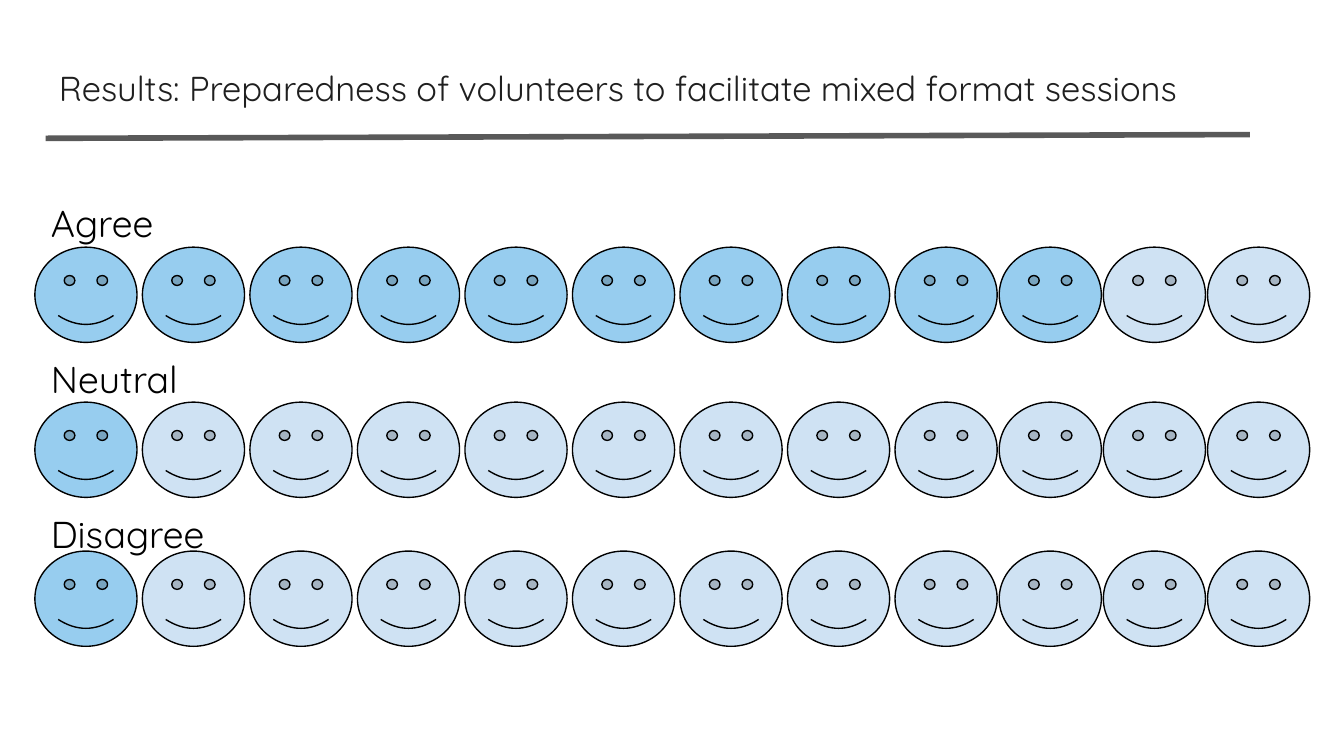
from pptx import Presentation
from pptx.dml.color import RGBColor
from pptx.enum.shapes import MSO_CONNECTOR, MSO_SHAPE
from pptx.enum.text import MSO_ANCHOR
from pptx.oxml.ns import qn
from pptx.util import Inches, Pt
from lxml.etree import SubElement

WIDTH, HEIGHT = Inches(10), Inches(5.625)
COL, ROW = WIDTH / 100, HEIGHT / 100

BLUE = RGBColor(0x97, 0xCD, 0xEF)
PALE = RGBColor(0xCF, 0xE2, 0xF3)
INK = RGBColor(0x1F, 0x1F, 0x1F)
BLACK = RGBColor(0, 0, 0)
GREY = RGBColor(0x59, 0x59, 0x59)

FONT = "Quicksand"
FACES = 12
FACE_W, FACE_H = 7.6, 12.6
PITCH, TIGHTEN, WIDE_STEPS = 8, 0.25, 8


def place(left, top, width, height):
    return [round(v) for v in (left * COL, top * ROW, width * COL, height * ROW)]


def add_text(s, box, text, size, color):
    tf = s.shapes.add_textbox(*place(*box)).text_frame
    tf.word_wrap = True
    tf.vertical_anchor = MSO_ANCHOR.TOP
    tf.margin_left = tf.margin_right = tf.margin_top = tf.margin_bottom = Inches(0.1)
    p = tf.paragraphs[0]
    p.text = text
    p.font.name, p.font.size, p.font.color.rgb = FONT, Pt(size), color


def add_header(s, box, title):
    left, top, width, height = box
    add_text(s, box, title, 18.5, INK)
    x, y, w, h = place(left, top + height, width - 3.6, 0.5)
    rule = s.shapes.add_connector(MSO_CONNECTOR.STRAIGHT, x, y, x + w, y - h)
    rule.line.color.rgb = GREY
    rule.line.width = Pt(3)
    SubElement(rule._element.spPr, qn("a:effectLst"))


def add_face(s, left, top, color):
    sp = s.shapes.add_shape(MSO_SHAPE.SMILEY_FACE, *place(left, top, FACE_W, FACE_H))
    sp.shadow.inherit = False
    sp.fill.solid()
    sp.fill.fore_color.rgb = color
    sp.line.color.rgb = BLACK
    sp.line.width = Pt(0.75)
    sp.adjustments[0] = 0.047


def add_rating(s, box, label, label_top, count):
    left, top, width, height = box
    for i in range(FACES):
        offset = PITCH * i - TIGHTEN * max(0, i - WIDE_STEPS)
        add_face(s, left + offset, top, BLUE if i < count else PALE)
    add_text(s, (left + 0.2, label_top, width, height - FACE_H), label, 20, BLACK)


def main():
    prs = Presentation()
    prs.slide_width, prs.slide_height = WIDTH, HEIGHT
    s = prs.slides.add_slide(prs.slide_layouts[6])
    add_header(s, (3.4, 7.1, 93.2, 11.2),
               "Results: Preparedness of volunteers to facilitate mixed format sessions")
    for label, label_top, top, count in (
        ("Agree", 24.7, 32.7, 10),
        ("Neutral", 45.4, 53.2, 1),
        ("Disagree", 65.8, 72.9, 1),
    ):
        add_rating(s, (2.6, top, 90.9, 22.2), label, label_top, count)
    prs.save("out.pptx")


if __name__ == "__main__":
    main()
